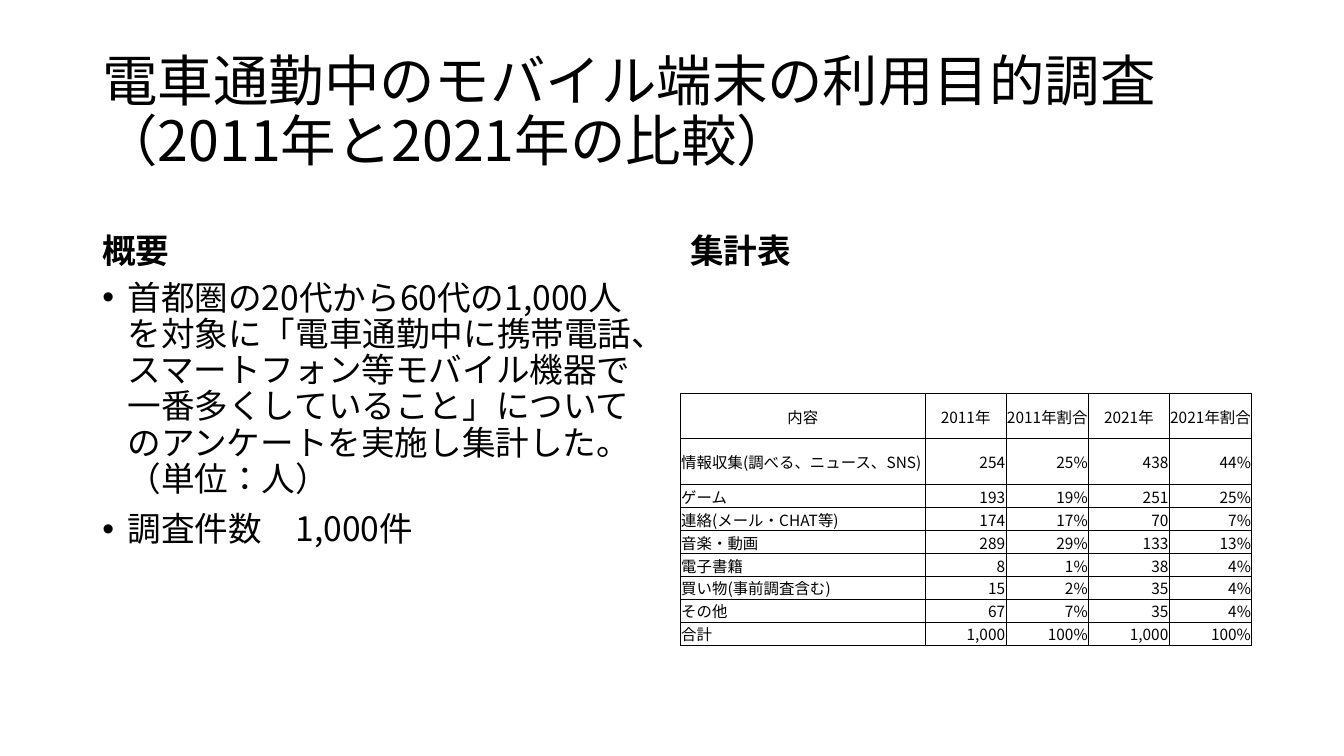
import pptx
import pptx.dml.color
import pptx.enum.text
import pptx.oxml
import pptx.oxml.ns
import pptx.util

Pt = pptx.util.Pt
ALIGN = pptx.enum.text.PP_ALIGN
ANCHOR = pptx.enum.text.MSO_ANCHOR
NAMESPACE = pptx.oxml.ns.nsdecls("a")

TITLE = "電車通勤中のモバイル端末の利用目的調査\n（2011年と2021年の比較）"
SUMMARY = [
    "首都圏の20代から60代の1,000人を対象に「電車通勤中に携帯電話、スマートフォン等モバイル機器で"
    "一番多くしていること」についてのアンケートを実施し集計した。（単位：人）",
    "調査件数\u30001,000件",
]
SURVEY = [
    ("内容", "2011年", "2011年割合", "2021年", "2021年割合"),
    ("情報収集(調べる、ニュース、SNS)", "254", "25%", "438", "44%"),
    ("ゲーム", "193", "19%", "251", "25%"),
    ("連絡(メール・CHAT等)", "174", "17%", "70", "7%"),
    ("音楽・動画", "289", "29%", "133", "13%"),
    ("電子書籍", "8", "1%", "38", "4%"),
    ("買い物(事前調査含む)", "15", "2%", "35", "4%"),
    ("その他", "67", "7%", "35", "4%"),
    ("合計", "1,000", "100%", "1,000", "100%"),
]
COLUMN_WIDTHS = [175, 57.6, 59, 57.6, 59]
ROW_HEIGHTS = [32.6] * 2 + [16.4] * 7


def color(value):
    return pptx.dml.color.RGBColor.from_string(value)


class SlideWriter:
    font_name = "Noto Sans CJK JP"
    ink = "000000"

    def __init__(self, page):
        self.page = page

    def style(self, para, size, bold=False):
        para.font.name = self.font_name
        para.font.size = Pt(size)
        para.font.bold = bold
        para.font.color.rgb = color(self.ink)
        defaults = para._p.get_or_add_pPr().get_or_add_defRPr()
        defaults.append(pptx.oxml.parse_xml(f'<a:ea {NAMESPACE} typeface="{self.font_name}"/>'))
        for span in para.runs:
            span._r.get_or_add_rPr().set("lang", "ja-JP")

    def text(self, area, lines, size, anchor, spacing=0.9, before=10, bold=False, bullet=False):
        frame = self.page.shapes.add_textbox(*map(Pt, area)).text_frame
        frame.word_wrap = True
        frame.vertical_anchor = anchor
        for index, line in enumerate(lines):
            para = frame.add_paragraph() if index else frame.paragraphs[0]
            para.text = line
            para.line_spacing = spacing
            para.space_before = Pt(before)
            if bullet:
                self.bullet(para)
            self.style(para, size, bold)

    def bullet(self, para):
        properties = para._p.get_or_add_pPr()
        properties.set("marL", str(Pt(18)))
        properties.set("indent", str(Pt(-18)))
        properties.append(pptx.oxml.parse_xml(f'<a:buFont {NAMESPACE} typeface="Arial"/>'))
        properties.append(pptx.oxml.parse_xml(f'<a:buChar {NAMESPACE} char="•"/>'))

    def table(self, left, top, widths, heights, rows, size):
        area = (left, top, sum(widths), sum(heights))
        table = self.page.shapes.add_table(len(rows), len(widths), *map(Pt, area)).table
        table.first_row = table.horz_banding = False
        for column, width in zip(table.columns, widths):
            column.width = Pt(width)
        for row, height in zip(table.rows, heights):
            row.height = Pt(height)
        for row_index, values in enumerate(rows):
            for column_index, value in enumerate(values):
                align = ALIGN.LEFT if column_index == 0 else ALIGN.RIGHT
                if row_index == 0:
                    align = ALIGN.CENTER
                self.cell(table.cell(row_index, column_index), value, size, align)

    def cell(self, cell, value, size, align):
        cell.margin_left = cell.margin_right = cell.margin_top = Pt(0.6)
        cell.margin_bottom = 0
        cell.vertical_anchor = ANCHOR.MIDDLE
        para = cell.text_frame.paragraphs[0]
        para.text = value
        para.alignment = align
        self.style(para, size)
        properties = cell._tc.get_or_add_tcPr()
        for side in ("lnL", "lnR", "lnT", "lnB"):
            properties.append(pptx.oxml.parse_xml(
                f'<a:{side} {NAMESPACE} w="{Pt(0.5)}"><a:solidFill>'
                f'<a:srgbClr val="{self.ink}"/></a:solidFill></a:{side}>'))
        cell.fill.background()


def main():
    deck = pptx.Presentation()
    deck.slide_width, deck.slide_height = Pt(960), Pt(540)
    writer = SlideWriter(deck.slides.add_slide(deck.slide_layouts[6]))
    writer.text((66, 28.8, 828, 104.4), [TITLE], 39.6, ANCHOR.MIDDLE, before=0)
    writer.text((66, 132.4, 406, 64.8), ["概要"], 24, ANCHOR.BOTTOM, bold=True)
    writer.text((66, 197.2, 406, 290), SUMMARY, 24, ANCHOR.TOP, bullet=True)
    writer.text((486, 132.4, 408, 64.8), ["集計表"], 24, ANCHOR.BOTTOM, bold=True)
    writer.table(486, 280.8, COLUMN_WIDTHS, ROW_HEIGHTS, SURVEY, 11)
    deck.save("out.pptx")


if __name__ == "__main__":
    main()
